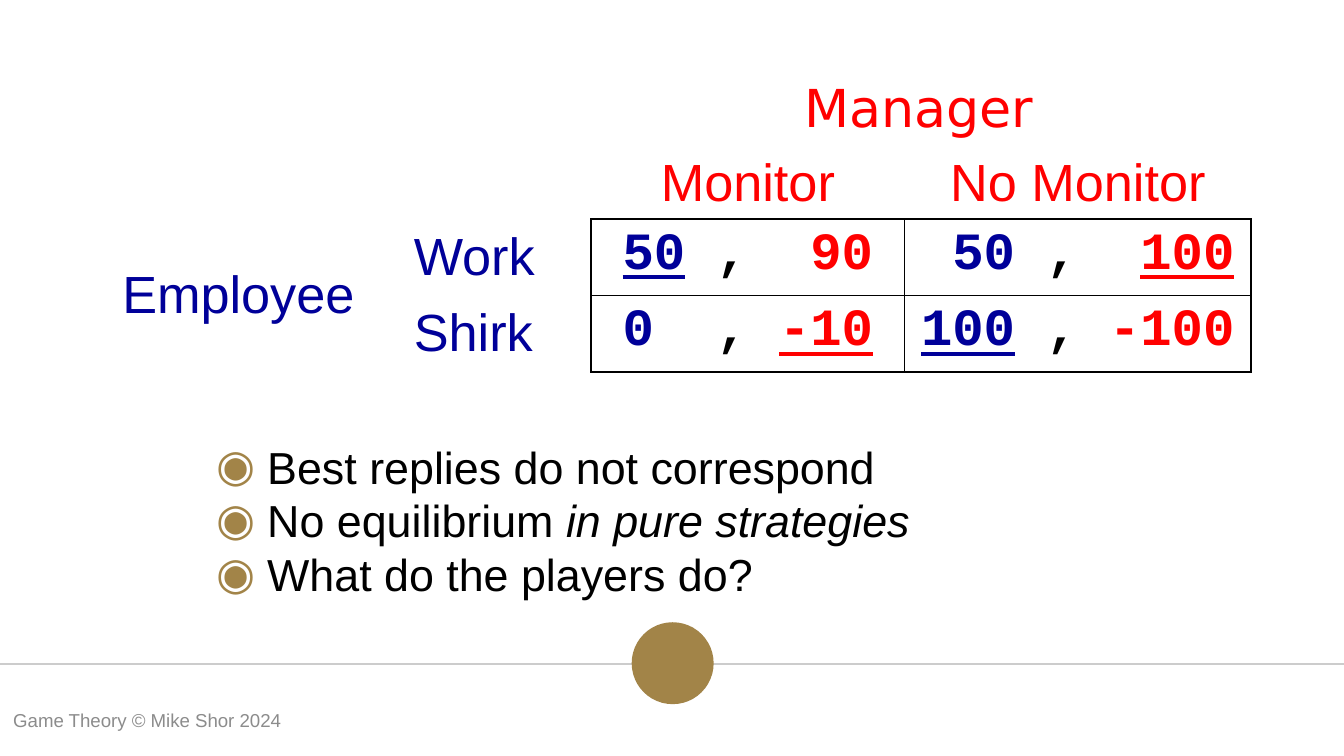
import dataclasses
import lxml.etree
import pptx
import pptx.dml.color
import pptx.enum.shapes
import pptx.enum.text
import pptx.oxml.ns
import pptx.util

Inches = pptx.util.Inches
Align = pptx.enum.text.PP_ALIGN
Anchor = pptx.enum.text.MSO_ANCHOR


@dataclasses.dataclass(frozen=True)
class Theme:
    ink: str = "000000"
    blue: str = "000099"
    red: str = "FF0000"
    gold: str = "A28448"
    rule: str = "CCCCCC"
    grey: str = "8C8C8C"
    sans: str = "Arial"
    mono: str = "Courier New"
    head: str = "DejaVu Sans"
    game: float = 28
    body: float = 24
    foot: float = 10
    thin: float = 0.75
    grid: float = 1


def rgb(code):
    return pptx.dml.color.RGBColor.from_string(code)


def add(parent, tag, **attrs):
    node = lxml.etree.SubElement(parent, pptx.oxml.ns.qn(tag))
    for key, value in attrs.items():
        node.set(key, str(value))
    return node


class Board:
    def __init__(self, theme, slide):
        self.theme = theme
        self.slide = slide

    def run(self, para, text, color, size, font=None, bold=False, under=False, slant=False):
        run = para.add_run()
        run.text = text
        face = run.font
        face.name = font or self.theme.sans
        face.size = pptx.util.Pt(size)
        face.color.rgb = rgb(color)
        face.bold, face.underline, face.italic = bold, under, slant

    def box(self, left, top, width, height, anchor=Anchor.TOP):
        shape = self.slide.shapes.add_textbox(
            Inches(left), Inches(top), Inches(width), Inches(height))
        frame = shape.text_frame
        frame.word_wrap = True
        frame.vertical_anchor = anchor
        return frame

    def line(self, left, right, top):
        line = self.slide.shapes.add_connector(
            pptx.enum.shapes.MSO_CONNECTOR.STRAIGHT,
            Inches(left), Inches(top), Inches(right), Inches(top))
        line.line.color.rgb = rgb(self.theme.rule)
        line.line.width = pptx.util.Pt(self.theme.thin)
        add(line._element.spPr, "a:effectLst")

    def dot(self, left, top, size):
        dot = self.slide.shapes.add_shape(
            pptx.enum.shapes.MSO_SHAPE.OVAL,
            Inches(left), Inches(top), Inches(size), Inches(size))
        dot.shadow.inherit = False
        dot.fill.solid()
        dot.fill.fore_color.rgb = rgb(self.theme.gold)
        dot.line.fill.background()

    def list(self, frame, items):
        for index, parts in enumerate(items):
            para = frame.add_paragraph() if index else frame.paragraphs[0]
            props = para._p.get_or_add_pPr()
            props.set("marL", str(Inches(0.38)))
            props.set("indent", str(Inches(-0.38)))
            add(add(props, "a:buClr"), "a:srgbClr", val=self.theme.gold)
            add(props, "a:buFont", typeface=self.theme.sans)
            add(props, "a:buChar", char="◉")
            for text, slant in parts:
                self.run(para, text, self.theme.ink, self.theme.body, slant=slant)

    def table(self, left, top, widths, height, rows):
        frame = self.slide.shapes.add_table(
            rows, len(widths), Inches(left), Inches(top),
            Inches(sum(widths)), Inches(height * rows))
        table = frame.table
        table.first_row = table.horz_banding = False
        for col, width in zip(table.columns, widths):
            col.width = Inches(width)
        for row in table.rows:
            row.height = Inches(height)
        return table

    def edges(self, cell, drawn):
        cell.fill.background()
        props = cell._tc.get_or_add_tcPr()
        for index, side in enumerate("LRTB"):
            edge = add(props, f"a:ln{side}", w=pptx.util.Pt(self.theme.grid))
            if side in drawn:
                add(add(edge, "a:solidFill"), "a:srgbClr", val=self.theme.ink)
            else:
                add(edge, "a:noFill")
            props.insert(index, edge)

    def label(self, cell, text, color, anchor, align=Align.LEFT):
        cell.vertical_anchor = anchor
        para = cell.text_frame.paragraphs[0]
        para.alignment = align
        self.run(para, text, color, self.theme.game)

    def payoff(self, cell, row, gap, col, best):
        theme = self.theme
        para = cell.text_frame.paragraphs[0]
        para.alignment = Align.CENTER
        parts = ((row, theme.blue, "row" in best), (gap, theme.ink, False),
                 (col, theme.red, "col" in best))
        for text, color, under in parts:
            self.run(para, text, color, theme.game, theme.mono, True, under)


def main():
    deck = pptx.Presentation()
    deck.slide_width = Inches(10)
    deck.slide_height = deck.slide_width * 9 // 16
    theme = Theme()
    board = Board(theme, deck.slides.add_slide(deck.slide_layouts[6]))

    board.line(-0.01, 10.01, 4.94)
    board.dot(4.7, 4.63, 0.61)
    foot = board.box(0, 5.21, 3.38, 0.3, Anchor.MIDDLE)
    board.run(foot.paragraphs[0], "Game Theory © Mike Shor 2024", theme.grey, theme.foot)

    head = board.box(5.47, 0.51, 2.73, 0.57).paragraphs[0]
    head.alignment = Align.CENTER
    board.run(head, "Manager", theme.red, theme.game, theme.head)

    game = board.table(0.81, 1.06, (2.17, 1.42, 2.33, 2.58), 0.57, 3)
    for row in range(3):
        for col in range(4):
            if row and col > 1:
                drawn = "LRTB"
            elif col > 1:
                drawn = "B"
            else:
                drawn = "R" if row and col else ""
            board.edges(game.cell(row, col), drawn)
    game.cell(1, 0).merge(game.cell(2, 0))
    board.label(game.cell(1, 0), "Employee", theme.blue, Anchor.MIDDLE)
    for col, text in enumerate(("Monitor", "No Monitor"), 2):
        board.label(game.cell(0, col), text, theme.red, Anchor.BOTTOM, Align.CENTER)
    for row, text in enumerate(("Work", "Shirk"), 1):
        board.label(game.cell(row, 1), text, theme.blue, Anchor.MIDDLE)
    scores = (
        (("50", " ,  ", "90", ("row",)), (" 50", " ,  ", "100", ("col",))),
        (("0", "  , ", "-10", ("col",)), ("100", " , ", "-100", ("row",))),
    )
    for row, line in enumerate(scores, 1):
        for col, score in enumerate(line, 2):
            board.payoff(game.cell(row, col), *score)

    board.list(board.box(1.51, 3.22, 7.45, 1.54), (
        (("Best replies do not correspond", False),),
        (("No equilibrium ", False), ("in pure strategies", True)),
        (("What do the players do?", False),),
    ))
    deck.save("out.pptx")


if __name__ == "__main__":
    main()
